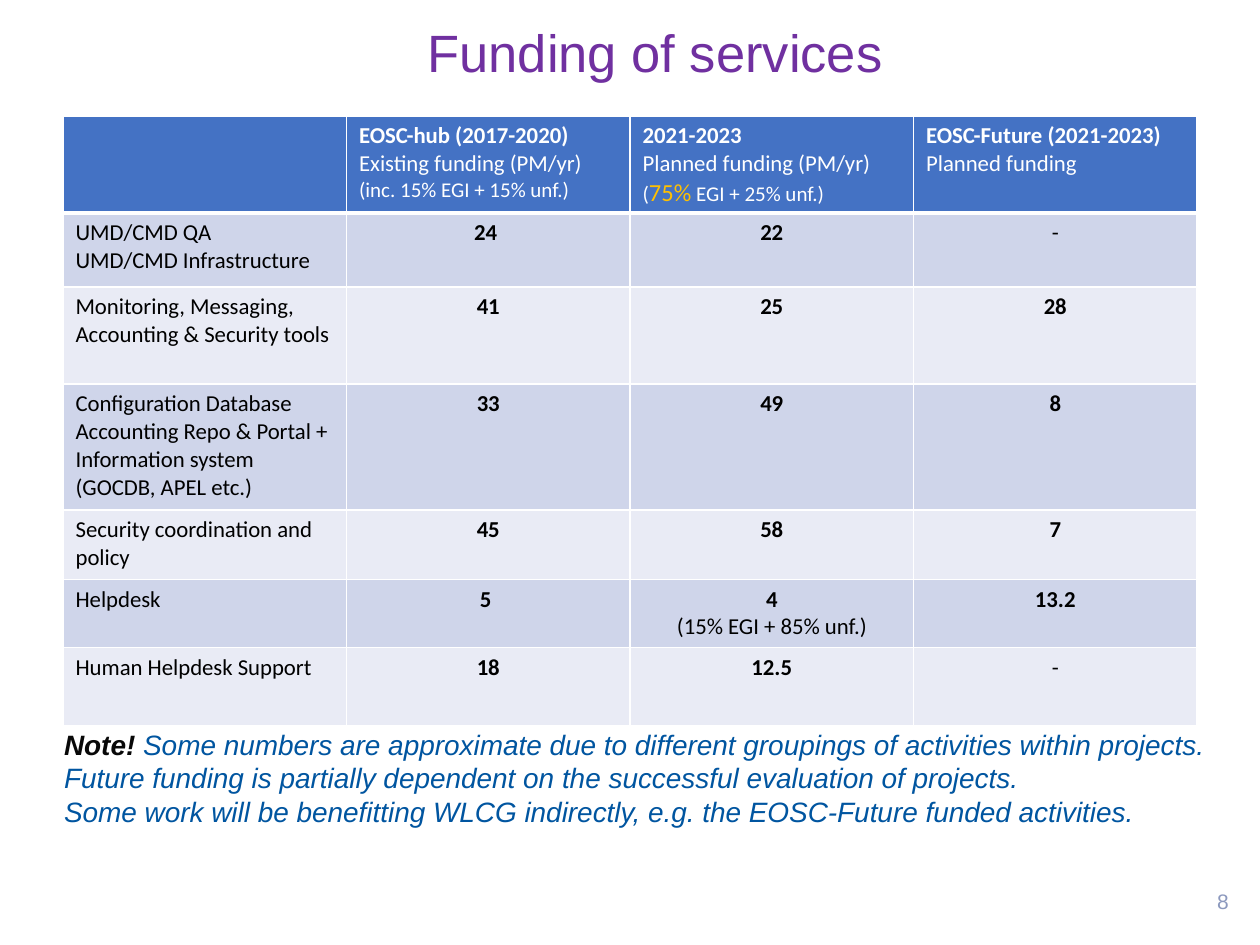
from dataclasses import dataclass

from lxml import etree
from pptx import Presentation
from pptx import util as u
from pptx.dml.color import RGBColor
from pptx.enum import text
from pptx.oxml import ns

WIDTH, HEIGHT = u.Inches(10), u.Inches(7.5)
LEFT, CENTER, RIGHT = text.PP_ALIGN.LEFT, text.PP_ALIGN.CENTER, text.PP_ALIGN.RIGHT


@dataclass(frozen=True)
class Theme:
    heading_font: str = "Arial"
    table_font: str = "Calibri"
    title: str = "7030A0"
    number: str = "8C99BE"
    header: str = "4472C4"
    bands: tuple = ("CFD5EA", "E9EBF5")
    white: str = "FFFFFF"
    black: str = "000000"
    accent: str = "FFC000"
    note: str = "0055A0"
    note_lead: str = "080808"
    title_size: int = 30
    note_size: int = 16
    accent_size: int = 14
    table_size: int = 13
    small_size: int = 12
    rule: float = 0.84
    header_rule: float = 2.5


THEME = Theme()
BOLD = {"bold": True}
SMALL = {"size": THEME.small_size}
ACCENT = {"size": THEME.accent_size, "color": THEME.accent}

HEADER = [
    [],
    [[("EOSC-hub (2017-2020)", BOLD)],
     [("Existing funding (PM/yr)", {})],
     [("(inc. 15% EGI + 15% unf.)", SMALL)]],
    [[("2021-2023", BOLD)],
     [("Planned funding (PM/yr)", {})],
     [("(", SMALL), ("75%", ACCENT), (" EGI + 25% unf.)", SMALL)]],
    [[("EOSC-Future (2021-2023)", BOLD)],
     [("Planned funding", {})]],
]

SERVICES = [
    (["UMD/CMD QA", "UMD/CMD Infrastructure"], ["24 "], ["22"], ["-"]),
    (["Monitoring, Messaging, Accounting & Security tools"], ["41"], ["25"], ["28"]),
    (["Configuration Database",
      "Accounting Repo & Portal + Information system (GOCDB, APEL etc.)"],
     ["33"], ["49"], ["8"]),
    (["Security coordination and policy"], ["45"], ["58"], ["7"]),
    (["Helpdesk"], ["5 "], ["4", "(15% EGI + 85% unf.)"], ["13.2"]),
    (["Human Helpdesk Support"], ["18"], ["12.5"], ["-"]),
]
ROW_HEIGHTS = [0.76, 0.59, 0.77, 1, 0.55, 0.54, 0.62]


def add_span(para, words, font, size, color, bold=False, italic=False):
    span = para.add_run()
    span.text = words
    span.font.name = font
    span.font.size = u.Pt(size)
    span.font.color.rgb = RGBColor.from_string(color)
    span.font.bold = bold
    span.font.italic = italic


def fill_frame(frame, paragraphs, align, **base):
    for index, spans in enumerate(paragraphs):
        para = frame.paragraphs[0] if index == 0 else frame.add_paragraph()
        para.alignment = align
        for words, style in spans:
            if words == "\n":
                para.add_line_break()
            else:
                add_span(para, words, **{**base, **style})


def add_label(page, area, paragraphs, align, anchor, **base):
    left, top, width, height = area
    box = page.shapes.add_textbox(
        int(WIDTH * left), int(HEIGHT * top), int(WIDTH * width), int(HEIGHT * height))
    box.text_frame.word_wrap = True
    box.text_frame.vertical_anchor = anchor
    fill_frame(box.text_frame, paragraphs, align, **base)


def set_borders(cell, widths):
    properties = cell._tc.get_or_add_tcPr()
    for position, (side, points) in enumerate(widths.items()):
        line = etree.Element(ns.qn(f"a:ln{side}"), w=str(u.Pt(points)))
        paint = etree.SubElement(line, ns.qn("a:solidFill"))
        etree.SubElement(paint, ns.qn("a:srgbClr"), val=THEME.white)
        properties.insert(position, line)


def style_cell(cell, row):
    cell.fill.solid()
    color = THEME.header if row == 0 else THEME.bands[(row - 1) % 2]
    cell.fill.fore_color.rgb = RGBColor.from_string(color)
    widths = dict.fromkeys("LRTB", THEME.rule)
    if row < 2:
        widths["B" if row == 0 else "T"] = THEME.header_rule
    set_borders(cell, widths)


def service_spans(lines, column):
    return [[(line, {"bold": column > 0 and line[0].isdigit()})] for line in lines]


def add_funding_table(page):
    rows = [HEADER] + [
        [service_spans(lines, column) for column, lines in enumerate(service)]
        for service in SERVICES]
    columns = len(HEADER)
    frame = page.shapes.add_table(
        len(rows), columns, int(WIDTH * 0.05), u.Inches(0.92),
        int(WIDTH * 0.9), u.Inches(sum(ROW_HEIGHTS)))
    table = frame.table
    for row, (cells, height) in enumerate(zip(rows, ROW_HEIGHTS)):
        table.rows[row].height = u.Inches(height)
        for column, paragraphs in enumerate(cells):
            cell = table.cell(row, column)
            style_cell(cell, row)
            fill_frame(cell.text_frame, paragraphs,
                       CENTER if row and column else LEFT,
                       font=THEME.table_font, size=THEME.table_size,
                       color=THEME.black if row else THEME.white)


def main():
    deck = Presentation()
    deck.slide_width, deck.slide_height = WIDTH, HEIGHT
    page = deck.slides.add_slide(deck.slide_layouts[6])
    middle, top = text.MSO_ANCHOR.MIDDLE, text.MSO_ANCHOR.TOP

    add_label(page, (0.13, 0.005, 0.78, 0.1), [[("Funding of services", {})]],
              CENTER, middle, font=THEME.heading_font,
              size=THEME.title_size, color=THEME.title)
    add_label(page, (0.93, 0.927, 0.055, 0.053), [[("8", {})]],
              RIGHT, middle, font=THEME.heading_font,
              size=THEME.small_size, color=THEME.number)
    add_funding_table(page)
    note = [
        [("Note!", {"bold": True, "color": THEME.note_lead}),
         (" Some numbers are approximate due to different groupings "
          "of activities within projects.", {}),
         ("\n", {}),
         ("Future funding is partially dependent on the successful "
          "evaluation of projects.", {})],
        [("Some work will be benefitting WLCG indirectly, "
          "e.g. the EOSC-Future funded activities.", {})],
    ]
    add_label(page, (0.041, 0.763, 0.935, 0.121), note, LEFT, top,
              font=THEME.heading_font, size=THEME.note_size,
              color=THEME.note, italic=True)
    deck.save("out.pptx")


if __name__ == "__main__":
    main()
